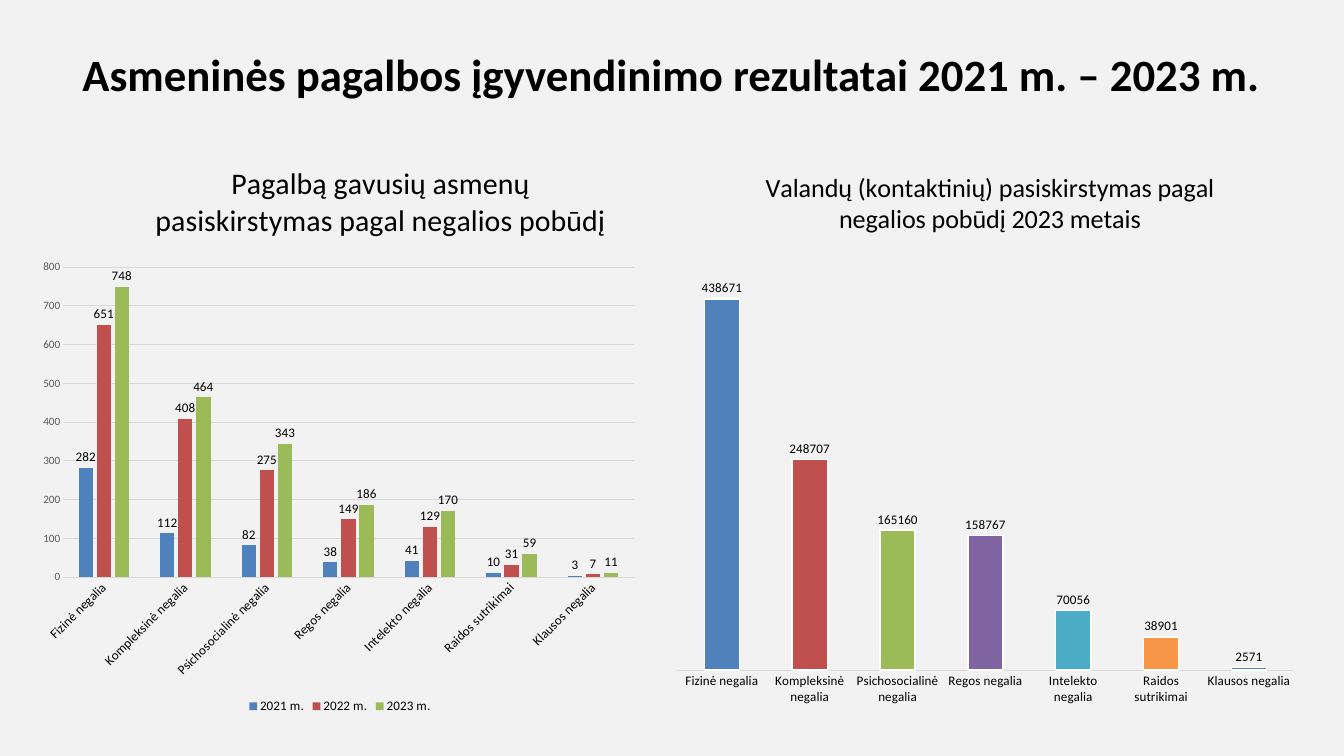
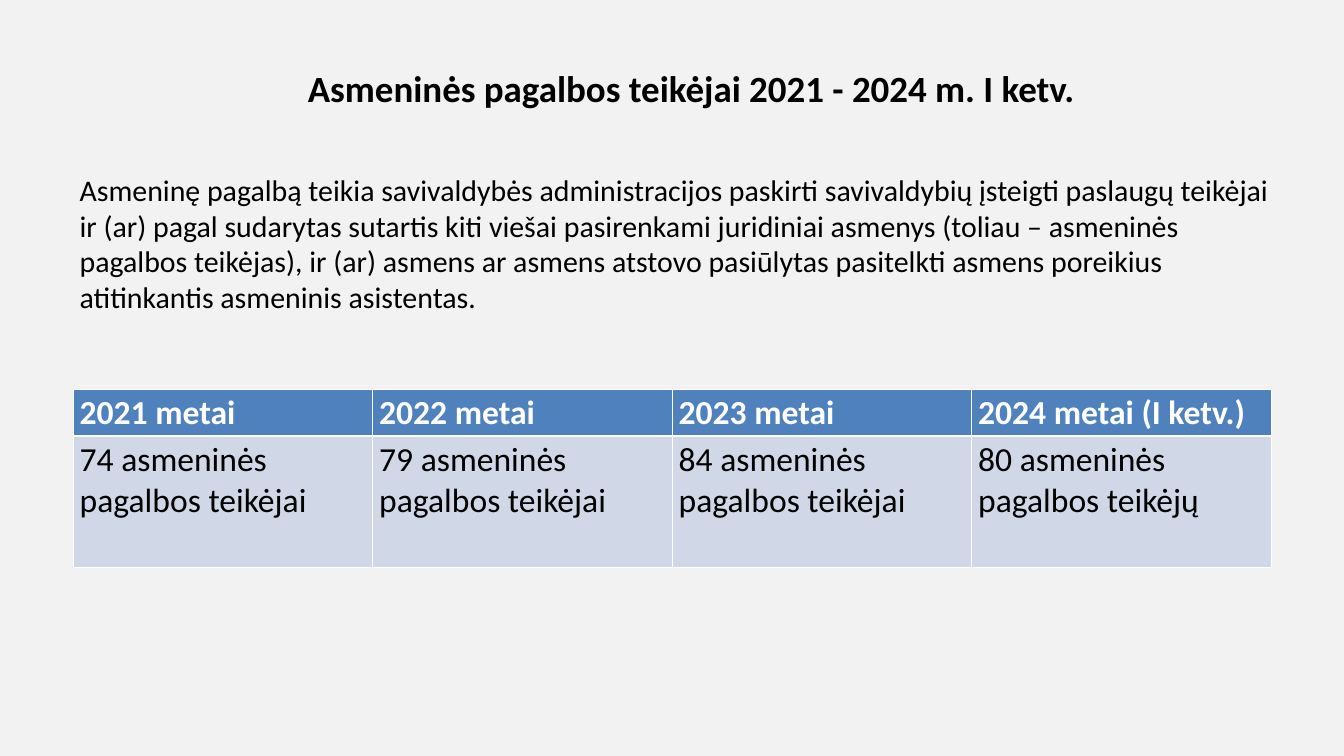
import pptx
import pptx.chart.data
import pptx.dml.color
import pptx.enum.chart
import pptx.enum.text
import pptx.oxml
import pptx.oxml.ns
import pptx.util

EMU_PER_PX = 914400 / 67.2
FONT = "Calibri"
BLACK, WHITE, GRAY, RULE = "000000", "FFFFFF", "595959", "D9D9D9"
BACKGROUND, CELL_TINT = "F2F2F2", "D0D8E8"
ACCENTS = ["4F81BD", "C0504D", "9BBB59", "8064A2", "4BACC6", "F79646"]
DISABILITIES = [
    "Fizinė negalia", "Kompleksinė negalia", "Psichosocialinė negalia",
    "Regos negalia", "Intelekto negalia", "Raidos sutrikimai", "Klausos negalia",
]
PEOPLE_BY_YEAR = {
    "2021 m.": [282, 112, 82, 38, 41, 10, 3],
    "2022 m.": [651, 408, 275, 149, 129, 31, 7],
    "2023 m.": [748, 464, 343, 186, 170, 59, 11],
}
HOURS = {"Series 1": [438671, 248707, 165160, 158767, 70056, 38901, 2571]}
PROVIDERS = [
    ("2021 metai", "74 asmeninės pagalbos teikėjai"),
    ("2022 metai", "79 asmeninės pagalbos teikėjai"),
    ("2023 metai", "84 asmeninės pagalbos teikėjai"),
    ("2024 metai (I ketv.)", "80 asmeninės pagalbos teikėjų"),
]
PROVIDERS_TEXT = (
    "Asmeninę pagalbą teikia savivaldybės administracijos paskirti savivaldybių "
    "įsteigti paslaugų teikėjai ir (ar) pagal sudarytas sutartis kiti viešai "
    "pasirenkami juridiniai asmenys (toliau – asmeninės pagalbos teikėjas), ir (ar) "
    "asmens ar asmens atstovo pasiūlytas pasitelkti asmens poreikius atitinkantis "
    "asmeninis asistentas."
)


def px(length):
    """Turn pixels into EMU."""
    return pptx.util.Emu(round(length * EMU_PER_PX))


def rgb(color):
    """Turn a hex string into a colour."""
    return pptx.dml.color.RGBColor.from_string(color)


def assign(target, values):
    """Set each named attribute on the target."""
    for name, value in values.items():
        setattr(target, name, value)


def style_font(font, size, color=BLACK, bold=False):
    """Give a font the deck's typeface, a size, a colour and a weight."""
    assign(font, {"name": FONT, "size": pptx.util.Pt(size), "bold": bold})
    font.color.rgb = rgb(color)


def fill_with(fill, color):
    """Fill with one solid colour."""
    fill.solid()
    fill.fore_color.rgb = rgb(color)


def style_line(line, color, width):
    """Give a line a colour and a width in points."""
    line.color.rgb = rgb(color)
    line.width = pptx.util.Pt(width)


def add_titled_slide(prs, title, box, size):
    """Add a slide with a bold centred title."""
    slide = prs.slides.add_slide(prs.slide_layouts[5])
    heading = slide.shapes.title
    assign(heading, dict(zip(("left", "top", "width", "height"), map(px, box))))
    frame = heading.text_frame
    frame.text = title
    assign(frame, {
        "word_wrap": True,
        "auto_size": pptx.enum.text.MSO_AUTO_SIZE.NONE,
        "vertical_anchor": pptx.enum.text.MSO_ANCHOR.MIDDLE,
    })
    paragraph = frame.paragraphs[0]
    paragraph.alignment = pptx.enum.text.PP_ALIGN.CENTER
    style_font(paragraph.runs[0].font, size, bold=True)
    return slide


def add_body(slide, text, box, size):
    """Add a wrapped paragraph of body text."""
    frame = slide.shapes.add_textbox(*map(px, box)).text_frame
    frame.word_wrap = True
    frame.text = text
    style_font(frame.paragraphs[0].runs[0].font, size)


def place_part(parent, index, frame, part, inner=False):
    """Place a chart part, given in slide pixels, inside the chart frame."""
    for old in parent.findall(pptx.oxml.ns.qn("c:layout")):
        parent.remove(old)
    left, top, width, height = frame
    values = {"x": (part[0] - left) / width, "y": (part[1] - top) / height}
    if inner:
        values.update(w=part[2] / width, h=part[3] / height)
    target = '<c:layoutTarget val="inner"/>' if inner else ""
    modes = "".join(f'<c:{side}Mode val="edge"/>' for side in "xy")
    sizes = "".join(f'<c:{key} val="{value:.4f}"/>' for key, value in values.items())
    parent.insert(index, pptx.oxml.parse_xml(
        f'<c:layout {pptx.oxml.ns.nsdecls("c")}><c:manualLayout>'
        f"{target}{modes}{sizes}</c:manualLayout></c:layout>"))


def add_columns(slide, frame, data, title, title_size, title_at, plot, top_value, spacing):
    """Add a column chart with a title, value labels and a thin category axis."""
    chart_data = pptx.chart.data.CategoryChartData()
    chart_data.categories = DISABILITIES
    for name, values in data.items():
        chart_data.add_series(name, values)
    chart = slide.shapes.add_chart(
        pptx.enum.chart.XL_CHART_TYPE.COLUMN_CLUSTERED, *map(px, frame), chart_data).chart
    style_font(chart.font, 10)
    chart.has_legend = False
    chart.has_title = True
    heading = chart.chart_title.text_frame
    heading.text = title
    style_font(heading.paragraphs[0].runs[0].font, title_size)
    place_part(chart.element.xpath("c:chart/c:title")[0], 1, frame, title_at)
    place_part(chart.element.xpath("c:chart/c:plotArea")[0], 0, frame, plot, inner=True)

    no_tick = pptx.enum.chart.XL_TICK_MARK.NONE
    for axis in (chart.category_axis, chart.value_axis):
        assign(axis, {"major_tick_mark": no_tick, "minor_tick_mark": no_tick,
                      "has_major_gridlines": False})
    style_font(chart.category_axis.tick_labels.font, 14)
    style_line(chart.category_axis.format.line, RULE, 0.75)
    assign(chart.value_axis, {"minimum_scale": 0, "maximum_scale": top_value})

    columns = chart.plots[0]
    assign(columns, {"vary_by_categories": False, **spacing})
    for series, color in zip(columns.series, ACCENTS):
        fill_with(series.format.fill, color)
        series.invert_if_negative = False
        labels = series.data_labels
        assign(labels, {"show_value": True,
                        "position": pptx.enum.chart.XL_LABEL_POSITION.OUTSIDE_END})
        style_font(labels.font, 14)
    return chart


def show_years(chart):
    """Show the value scale, its gridlines, slanted categories and the legend."""
    scale = chart.value_axis
    scale.has_major_gridlines = True
    scale.major_unit = 100
    style_line(scale.major_gridlines.format.line, RULE, 0.75)
    scale.format.line.fill.background()
    style_font(scale.tick_labels.font, 12, GRAY)
    chart.element.xpath("c:chart/c:plotArea/c:catAx/c:txPr/a:bodyPr")[0].set("rot", "-2700000")
    chart.has_legend = True
    assign(chart.legend, {"position": pptx.enum.chart.XL_LEGEND_POSITION.BOTTOM,
                          "include_in_layout": False})
    style_font(chart.legend.font, 14)


def color_categories(chart):
    """Hide the value scale and give each column its own colour."""
    chart.value_axis.visible = False
    series = chart.plots[0].series[0]
    style_line(series.format.line, WHITE, 1.5)
    for index, color in enumerate(ACCENTS):
        column = series.points[index].format
        fill_with(column.fill, color)
        style_line(column.line, WHITE, 1.5)


def border_cell(cell, bottom):
    """Draw white borders, with a bottom width in points."""
    properties = cell._tc.get_or_add_tcPr()
    for index, (side, width) in enumerate({"L": 1, "R": 1, "T": 1, "B": bottom}.items()):
        properties.insert(index, pptx.oxml.parse_xml(
            f'<a:ln{side} {pptx.oxml.ns.nsdecls("a")} w="{pptx.util.Pt(width)}">'
            f'<a:solidFill><a:srgbClr val="{WHITE}"/></a:solidFill></a:ln{side}>'))


def add_providers_table(slide, box, row_heights):
    """Add the table of provider counts by year."""
    table = slide.shapes.add_table(2, len(PROVIDERS), *map(px, box)).table
    for row, height in zip(table.rows, row_heights):
        row.height = px(height)
    for column, texts in enumerate(PROVIDERS):
        for row, text in enumerate(texts):
            header = row == 0
            cell = table.cell(row, column)
            cell.text = text
            style_font(cell.text_frame.paragraphs[0].runs[0].font, 36,
                       WHITE if header else BLACK, header)
            fill_with(cell.fill, ACCENTS[0] if header else CELL_TINT)
            border_cell(cell, 3 if header else 1)


def main():
    """Build both slides and save the deck."""
    prs = pptx.Presentation()
    assign(prs, {"slide_width": px(1344), "slide_height": px(756)})
    fill_with(prs.slide_master.background.fill, BACKGROUND)

    results = add_titled_slide(
        prs, "Asmeninės pagalbos įgyvendinimo rezultatai 2021 m. – 2023 m.",
        (73, 32, 1197, 84), 48)
    show_years(add_columns(
        results, (32, 142, 616, 575), PEOPLE_BY_YEAR,
        "Pagalbą gavusių asmenų pasiskirstymas pagal negalios pobūdį", 32,
        (150, 157), (63, 267, 571, 310), 800, {"gap_width": 219, "overlap": -27}))
    color_categories(add_columns(
        results, (665, 142, 640, 575), HOURS,
        "Valandų (kontaktinių) pasiskirstymas pagal negalios pobūdį 2023 metais", 28,
        (761, 165), (678, 247, 615, 423), 500000, {"gap_width": 150, "overlap": -25}))

    providers = add_titled_slide(
        prs, "Asmeninės pagalbos teikėjai 2021 - 2024 m. I ketv.", (279, 46, 825, 84), 39.6)
    add_body(providers, PROVIDERS_TEXT, (73, 168, 1212, 183), 32)
    add_providers_table(providers, (73, 389, 1198, 178), (47, 131))
    prs.save("out.pptx")


if __name__ == "__main__":
    main()
